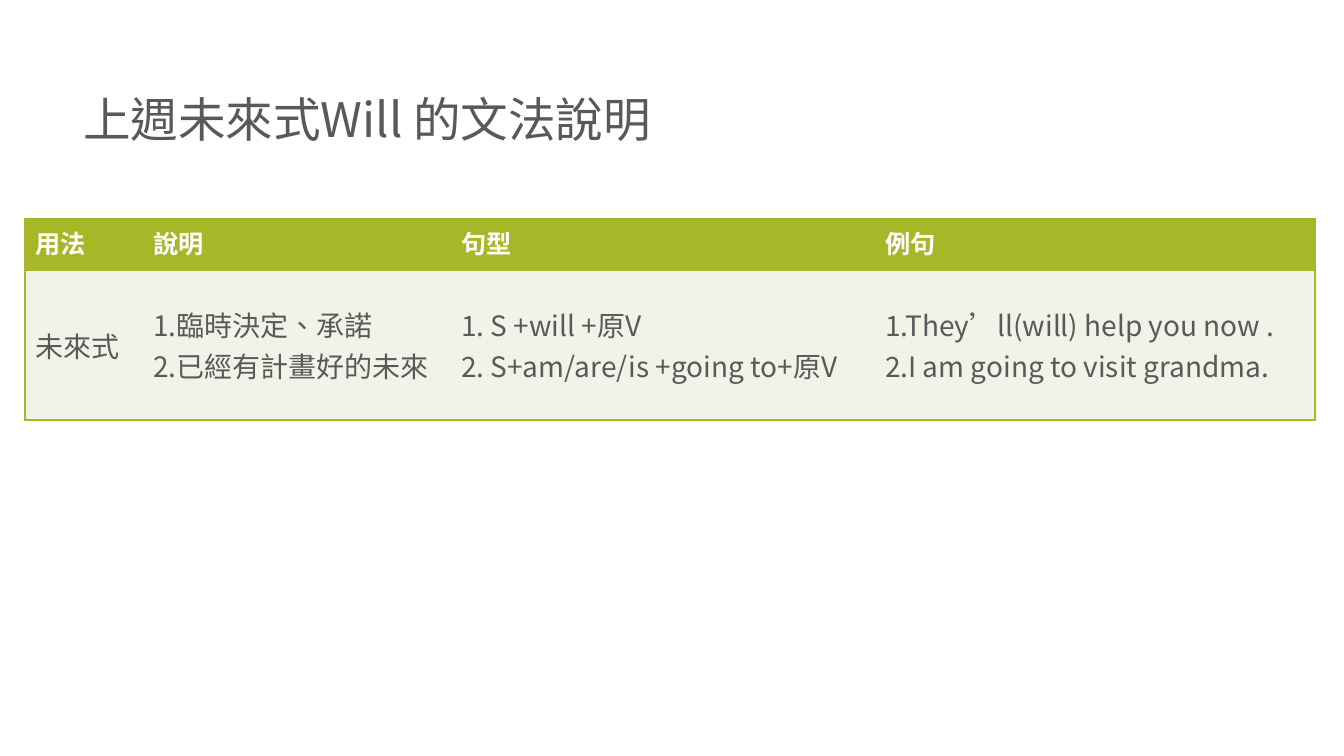
import pptx
import pptx.util
import pptx.dml.color
import pptx.enum.text
import pptx.enum.lang
import pptx.oxml
import pptx.oxml.ns
import lxml.etree

SCALE = 914400 / 100.8
PLAIN = "{2D5ABB26-0587-4C30-8999-92F81FD0307C}"
LEFT = pptx.enum.text.PP_ALIGN.LEFT
ANCHOR = pptx.enum.text.MSO_ANCHOR
GREEN, PALE, GREY, WHITE = "A6B727", "F1F3E8", "595959", "FFFFFF"
HAN = "Noto Sans CJK SC"


def px(size):
    return pptx.util.Emu(round(size * SCALE))


def color(code):
    return pptx.dml.color.RGBColor.from_string(code)


class Deck:
    def __init__(self, wide, high):
        self.show = pptx.Presentation()
        self.show.slide_width = px(wide)
        self.show.slide_height = px(high)
        self.slide = self.show.slides.add_slide(self.show.slide_layouts[5])

    def label(self, frame, text, size, ink, face=HAN, bold=False):
        frame.text = text
        for para in frame.paragraphs:
            para.alignment = LEFT
            font = para.font
            font.size = pptx.util.Pt(size)
            font.bold = bold
            font.name = face
            font.color.rgb = color(ink)
            font.language_id = pptx.enum.lang.MSO_LANGUAGE_ID.TRADITIONAL_CHINESE
            props = para._p.pPr.find(pptx.oxml.ns.qn("a:defRPr"))
            east = lxml.etree.SubElement(props, pptx.oxml.ns.qn("a:ea"))
            east.set("typeface", HAN)

    def title(self, box, text):
        shape = self.slide.shapes.title
        shape.left, shape.top, shape.width, shape.height = map(px, box)
        frame = shape.text_frame
        frame.word_wrap = True
        frame.vertical_anchor = ANCHOR.BOTTOM
        self.label(frame, text, 34, GREY)
        frame.paragraphs[0].line_spacing = 0.9

    def edge(self, cell, sides):
        props = cell._tc.get_or_add_tcPr()
        for side in sides:
            props.append(pptx.oxml.parse_xml(
                f'<a:ln{side} {pptx.oxml.ns.nsdecls("a")} w="12700"><a:solidFill>'
                f'<a:srgbClr val="{GREEN}"/></a:solidFill></a:ln{side}>'))

    def table(self, left, top, cols, rows, cells):
        shape = self.slide.shapes.add_table(
            len(rows), len(cols), px(left), px(top), px(sum(cols)), px(sum(rows)))
        grid = shape.table
        grid.horz_banding = False
        grid._tbl.tblPr.find(pptx.oxml.ns.qn("a:tableStyleId")).text = PLAIN
        for col, wide in zip(grid.columns, cols):
            col.width = px(wide)
        for row, high in zip(grid.rows, rows):
            row.height = px(high)
        for r, line in enumerate(cells):
            for c, text in enumerate(line):
                cell = grid.cell(r, c)
                sides = ["L"] * (c == 0) + ["R"] * (c == len(cols) - 1) + ["T", "B"]
                self.edge(cell, sides)
                cell.fill.solid()
                cell.fill.fore_color.rgb = color(PALE if r else GREEN)
                if r:
                    cell.vertical_anchor = ANCHOR.MIDDLE
                    self.label(cell.text_frame, text, 20, GREY)
                else:
                    self.label(cell.text_frame, text, 18, WHITE, "Lato", True)


def main():
    deck = Deck(1344, 756)
    deck.title((73, 21, 1033, 132), "上週未來式Will 的文法說明")
    deck.table(25, 219, (118, 308, 424, 440), (51, 150), (
        ("用法", "說明", "句型", "例句"),
        ("未來式",
         "1.臨時決定、承諾\n2.已經有計畫好的未來",
         "1. S +will +原V\n2. S+am/are/is +going to+原V",
         "1.They’ll(will) help you now .\n2.I am going to visit grandma."),
    ))
    deck.show.save("out.pptx")


if __name__ == "__main__":
    main()
